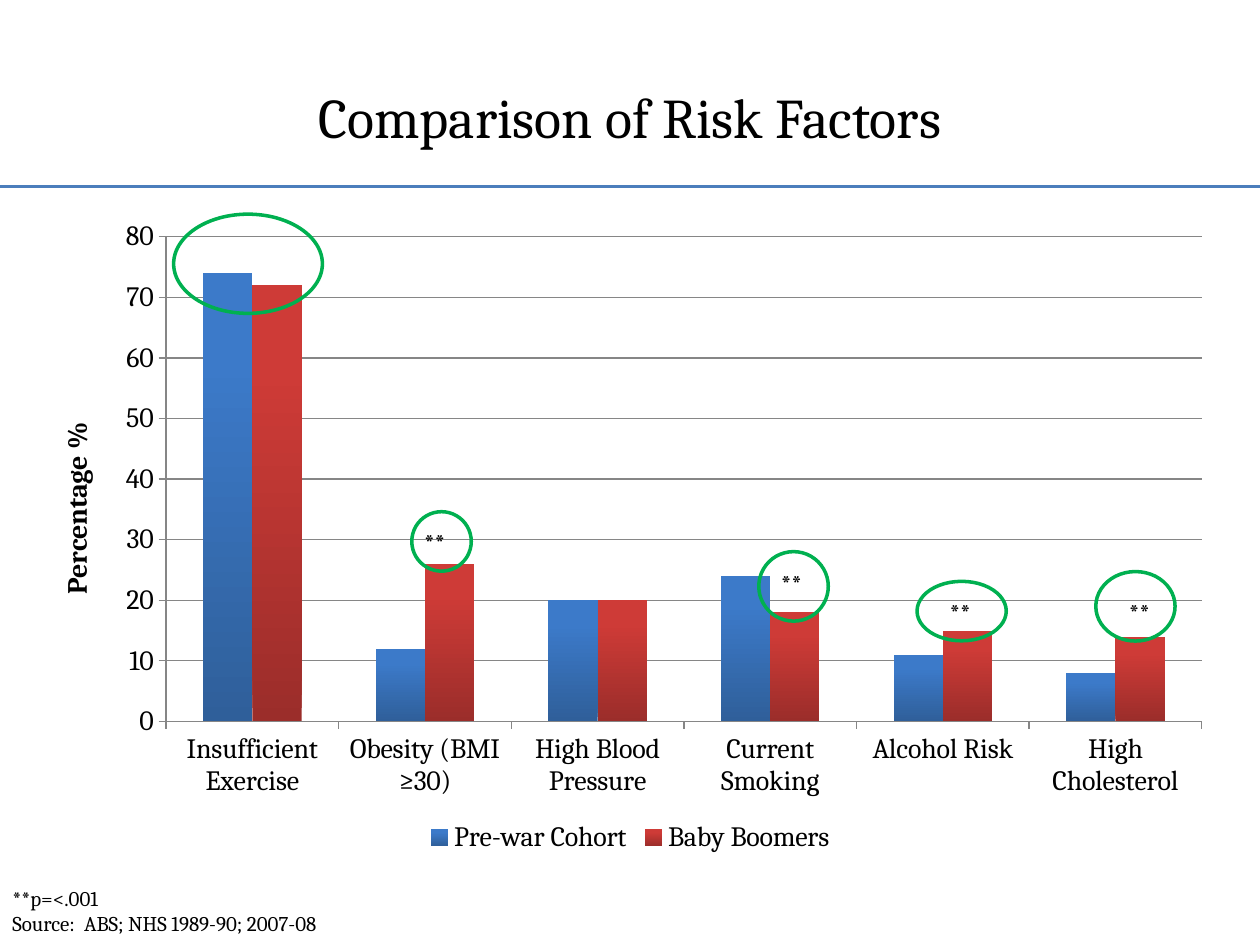
import pptx
import pptx.chart.data
import pptx.dml.color
import pptx.enum.chart
import pptx.enum.shapes
import pptx.enum.text
import pptx.oxml
import pptx.oxml.ns
import pptx.util

Pt = pptx.util.Pt
FONT = "Cambria"
GREEN, BLUE, GREY, BLACK = "00B050", "4B7EBC", "868686", "000000"

CATEGORIES = ["Insufficient Exercise", "Obesity (BMI ≥30)", "High Blood Pressure",
              "Current Smoking", "Alcohol Risk", "High Cholesterol"]
# name, values, bottom colour, top colour
SERIES = [
    ("Pre-war Cohort", (74, 12, 20, 24, 11, 8), "2F5F9A", "3C7AC9"),
    ("Baby Boomers", (72, 26, 20, 18, 15, 14), "9B2D2A", "CE3B37"),
]
# left, top, width, height
CIRCLES = [(99.2, 122.4, 85, 56.7), (235.3, 292.4, 34, 34), (524, 332.2, 51, 34),
           (626.2, 326.6, 45.3, 39.7), (433.6, 315.2, 39.7, 39.7)]
STARS = [(235.3, 297.8, 39.6, 24.2), (439.2, 321, 33.8, 24.2),
         (535.6, 337.8, 33.8, 24.2), (638, 337.8, 39.6, 24.2)]


def rgb(value):
    return pptx.dml.color.RGBColor.from_string(value)


def set_font(font, size, **extra):
    for name, value in {"name": FONT, "size": Pt(size), **extra}.items():
        setattr(font, name, value)
    font.color.rgb = rgb(BLACK)


def set_line(line, color, width):
    line.color.rgb = rgb(color)
    line.width = Pt(width)


def box(values):
    return [Pt(v) for v in values]


def add_title(s, text):
    sp = s.shapes.title
    sp.left, sp.top, sp.width, sp.height = box((36, 21.6, 648, 90))
    tf = sp.text_frame
    tf.text = text
    tf.vertical_anchor = pptx.enum.text.MSO_ANCHOR.MIDDLE
    p = tf.paragraphs[0]
    p.alignment = pptx.enum.text.PP_ALIGN.CENTER
    set_font(p.runs[0].font, 32)


def add_rule(s, y):
    line = s.shapes.add_connector(
        pptx.enum.shapes.MSO_CONNECTOR.STRAIGHT, *box((0, y, 720, y)))
    set_line(line.line, BLUE, 1.5)
    line._element.spPr.append(pptx.oxml.parse_xml(
        "<a:effectLst %s/>" % pptx.oxml.ns.nsdecls("a")))


def add_text(s, place, lines, size):
    tf = s.shapes.add_textbox(*box(place)).text_frame
    tf.word_wrap = True
    for i, text in enumerate(lines):
        p = tf.add_paragraph() if i else tf.paragraphs[0]
        r = p.add_run()
        r.text = text
        set_font(r.font, size)


def add_circle(s, place):
    sp = s.shapes.add_shape(pptx.enum.shapes.MSO_SHAPE.OVAL, *box(place))
    sp.shadow.inherit = False
    sp.fill.background()
    set_line(sp.line, GREEN, 2)


def set_plot_area(chart, x, y, w, h):
    area = chart._chartSpace.chart.plotArea
    for old in area.findall(pptx.oxml.ns.qn("c:layout")):
        area.remove(old)
    sizes = "".join('<c:%s val="%s"/>' % item
                    for item in zip("xywh", (x, y, w, h)))
    area.insert(0, pptx.oxml.parse_xml(
        '<c:layout %s><c:manualLayout><c:layoutTarget val="inner"/>'
        '<c:xMode val="edge"/><c:yMode val="edge"/>%s</c:manualLayout></c:layout>'
        % (pptx.oxml.ns.nsdecls("c"), sizes)))


def fill_series(series, bottom, top):
    fill = series.format.fill
    fill.gradient()
    fill.gradient_angle = 90
    for stop, color, position in zip(fill.gradient_stops, (bottom, top), (0, 0.8)):
        stop.color.rgb = rgb(color)
        stop.position = position


def add_chart(s, place):
    data = pptx.chart.data.CategoryChartData(number_format="0")
    data.categories = CATEGORIES
    for name, values, *_ in SERIES:
        data.add_series(name, values)
    chart = s.shapes.add_chart(pptx.enum.chart.XL_CHART_TYPE.COLUMN_CLUSTERED,
                               *box(place), data).chart
    set_font(chart.font, 10)
    chart.has_title = False
    set_plot_area(chart, 0.11, 0.05, 0.87, 0.74)

    # Columns
    plot = chart.plots[0]
    plot.gap_width = 150
    plot.overlap = 0
    plot.vary_by_categories = False
    for series, (_, _, bottom, top) in zip(plot.series, SERIES):
        fill_series(series, bottom, top)

    # Axes
    axis = chart.value_axis
    for ax in (chart.category_axis, axis):
        ax.major_tick_mark = pptx.enum.chart.XL_TICK_MARK.OUTSIDE
        set_font(ax.tick_labels.font, 16)
        set_line(ax.format.line, GREY, 0.75)
    axis.minimum_scale, axis.maximum_scale, axis.major_unit = 0, 80, 10
    axis.tick_labels.number_format = "0"
    axis.tick_labels.number_format_is_linked = False
    axis.has_major_gridlines = True
    set_line(axis.major_gridlines.format.line, GREY, 0.75)
    tf = axis.axis_title.text_frame
    tf.text = "Percentage %"
    set_font(tf.paragraphs[0].runs[0].font, 16, bold=True)

    # Legend
    chart.has_legend = True
    chart.legend.position = pptx.enum.chart.XL_LEGEND_POSITION.BOTTOM
    chart.legend.include_in_layout = False
    set_font(chart.legend.font, 16)


def main():
    prs = pptx.Presentation()
    prs.slide_width, prs.slide_height = Pt(720), Pt(540)
    s = prs.slides.add_slide(prs.slide_layouts[5])

    # Heading
    add_title(s, "Comparison of Risk Factors")
    add_rule(s, 106.6)

    # Chart and footnote
    add_chart(s, (20, 116.6, 680.4, 374.4))
    add_text(s, (0, 502.6, 257.8, 36),
             ["**p=<.001", "Source:  ABS; NHS 1989-90; 2007-08"], 12)

    # Significance marks
    for place in STARS:
        add_text(s, place, ["**"], 14)
    for place in CIRCLES:
        add_circle(s, place)

    prs.save("out.pptx")


if __name__ == "__main__":
    main()
